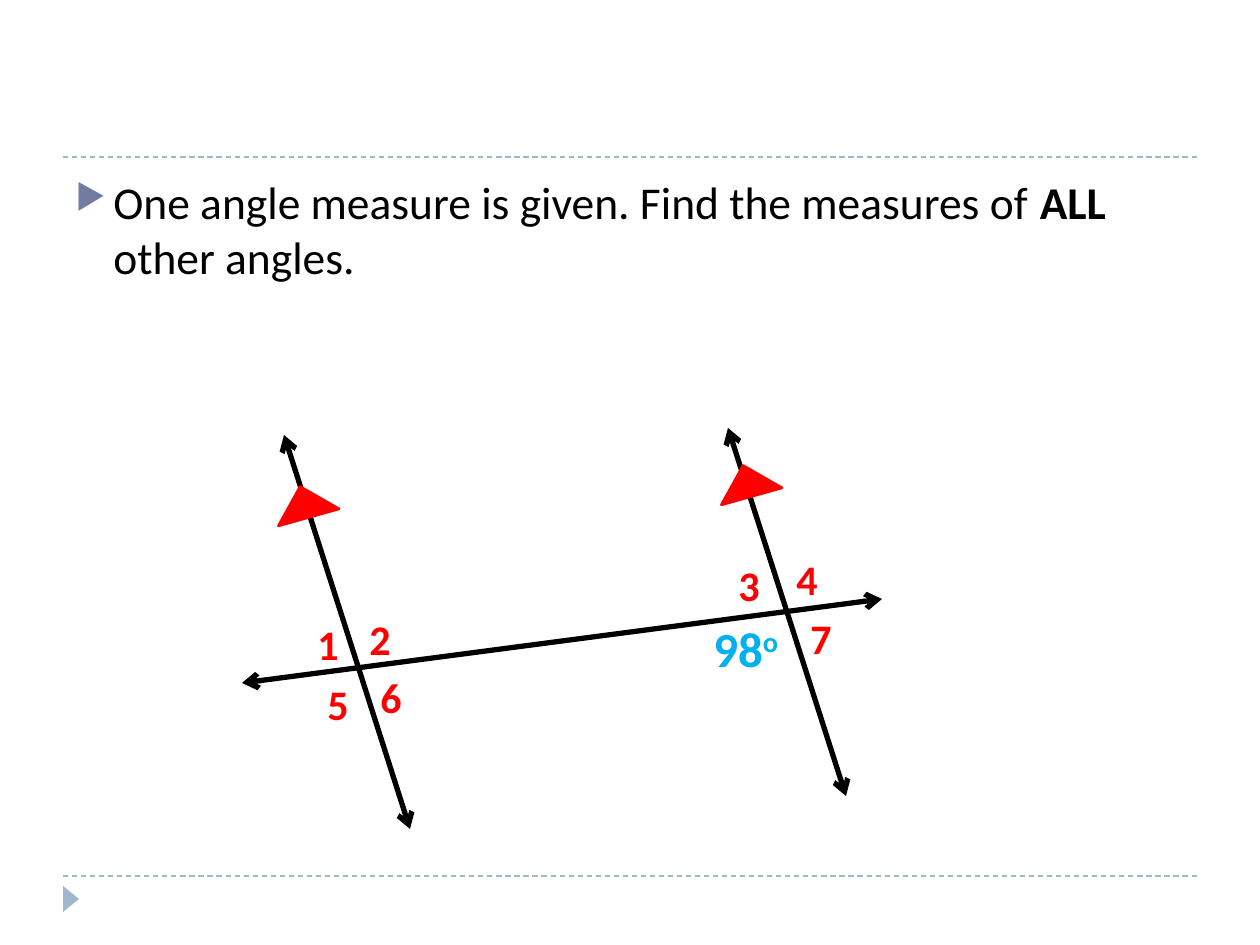
from lxml import etree
from pptx import Presentation
from pptx import util as u
from pptx.dml.color import RGBColor
from pptx.enum import dml, shapes, text
from pptx.oxml.ns import qn

BLACK = RGBColor(0x00, 0x00, 0x00)
RED = RGBColor(0xFF, 0x00, 0x00)
SKY = RGBColor(0x00, 0xB0, 0xF0)
MIST = RGBColor(0x9F, 0xB8, 0xCD)
BULLET = "727CA3"


def px(*lengths):
    return [round(length * 914400 / 126) for length in lengths]


def add_runs(box, runs, **base):
    """Fill the first paragraph of box with (wording, format values) runs."""
    box.text_frame.word_wrap = True
    paragraph = box.text_frame.paragraphs[0]
    for wording, changes in runs:
        run = paragraph.add_run()
        run.text = wording
        run.font.color.rgb = base["color"]
        for key, value in {"name": "Calibri", **base["font"], **changes}.items():
            setattr(run.font, key, value)
    return paragraph


prs = Presentation()
prs.slide_width, prs.slide_height = px(1260, 945)
slide = prs.slides.add_slide(prs.slide_layouts[6])

# Rules and geometry lines: ends, colour, width, whether arrows point both ways
lines = [
    ((63, 876, 1197, 876), MIST, 0.75, False),
    ((63, 157, 1197, 157), MIST, 0.75, False),
    ((728, 428, 846, 796), BLACK, 3, True),
    ((242, 683, 882, 599), BLACK, 3, True),
    ((284, 435, 410, 829), BLACK, 3, True),
]
for ends, color, width, is_arrow in lines:
    line = slide.shapes.add_connector(shapes.MSO_CONNECTOR.STRAIGHT, *px(*ends))
    line.line.color.rgb = color
    line.line.width = u.Pt(width)
    properties = line._element.spPr
    if is_arrow:
        outline = properties.find(qn("a:ln"))
        for end in ("a:headEnd", "a:tailEnd"):
            etree.SubElement(outline, qn(end), type="arrow")
    else:
        line.line.dash_style = dml.MSO_LINE.DASH
    etree.SubElement(properties, qn("a:effectLst"))

# Instruction
instruction = slide.shapes.add_textbox(*px(63, 168, 1134, 680))
paragraph = add_runs(
    instruction,
    [("One angle measure is given. Find the measures of ", {}),
     ("ALL ", {"bold": True}),
     ("other angles.", {})],
    color=BLACK, font={"size": u.Pt(26), "bold": False})
paragraph.space_before = u.Pt(6)
bullet = paragraph._p.get_or_add_pPr()
indent = px(38)[0]
bullet.set("marL", str(indent))
bullet.set("indent", str(-indent))
bullet_color = etree.SubElement(bullet, qn("a:buClr"))
etree.SubElement(bullet_color, qn("a:srgbClr"), val=BULLET)
etree.SubElement(bullet, qn("a:buSzPct"), val="76000")
etree.SubElement(bullet, qn("a:buChar"), char="▶")

# Given angle
given = slide.shapes.add_textbox(*px(701, 612, 145, 72))
paragraph = add_runs(given, [("98", {}), ("o", {})],
                     color=SKY, font={"size": u.Pt(28), "bold": True})
paragraph.runs[1].font._element.set("baseline", "30000")

# Unknown angles
angles = {"1": (305, 612), "2": (357, 607), "3": (726, 553), "4": (784, 547),
          "5": (315, 672), "6": (368, 665), "7": (798, 606)}
for number, corner in angles.items():
    label = slide.shapes.add_textbox(*px(*corner, 84, 63))
    add_runs(label, [(number, {})], color=RED, font={"size": u.Pt(24), "bold": True})

# Parallel marks and the footer marker: box, rotation, colour, outline width
triangles = [
    ((273, 486, 63, 32), 344.4, RED, 1.5),
    ((716, 465, 63, 32), 344.4, RED, 1.5),
    ((58, 891, 26, 16), 90, MIST, 0),
]
for box, rotation, color, width in triangles:
    mark = slide.shapes.add_shape(shapes.MSO_SHAPE.ISOSCELES_TRIANGLE, *px(*box))
    mark.rotation = rotation
    mark.shadow.inherit = False
    mark.fill.solid()
    mark.fill.fore_color.rgb = color
    if width:
        mark.line.color.rgb = color
        mark.line.width = u.Pt(width)
    else:
        mark.line.fill.background()

for shape in slide.shapes:
    if shape.has_text_frame:
        shape.text_frame.auto_size = text.MSO_AUTO_SIZE.NONE

prs.save("out.pptx")
